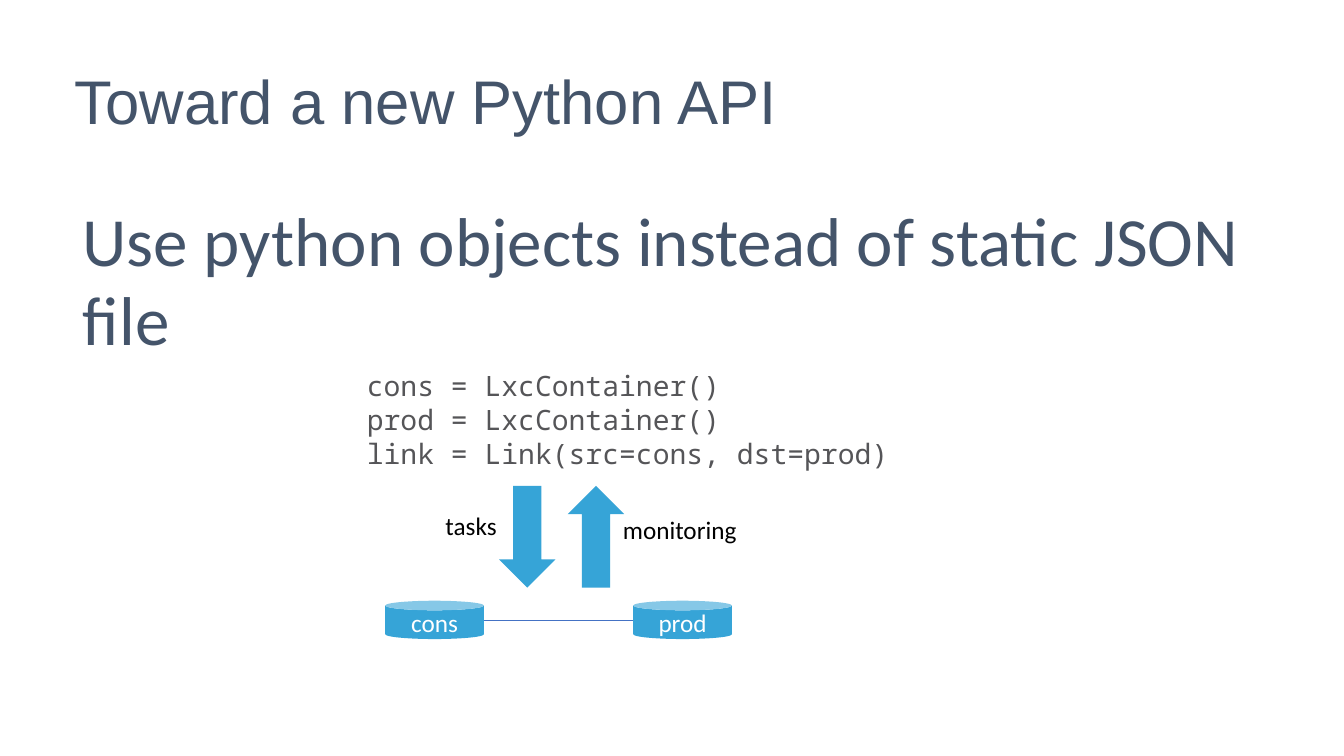
import pptx
import pptx.util
import pptx.dml.color
import pptx.enum.shapes
import pptx.enum.text
import pptx.oxml.ns
import lxml.etree

Inches, Pt = pptx.util.Inches, pptx.util.Pt
RGBColor = pptx.dml.color.RGBColor
SHAPE = pptx.enum.shapes.MSO_SHAPE
ALIGN = pptx.enum.text.PP_ALIGN
ANCHOR = pptx.enum.text.MSO_ANCHOR
AUTO = pptx.enum.text.MSO_AUTO_SIZE
qn = pptx.oxml.ns.qn

SLATE = RGBColor(0x44, 0x54, 0x6A)
GREY = RGBColor(0x55, 0x55, 0x58)
SKY = RGBColor(0x36, 0xA4, 0xD7)
BLUE = RGBColor(0x44, 0x72, 0xC4)
WHITE = RGBColor(0xFF, 0xFF, 0xFF)
BLACK = RGBColor(0, 0, 0)

TITLE = "Toward a new Python API"
BODY = "Use python objects instead of static JSON file"
CODE = [
    "cons = LxcContainer()",
    "prod = LxcContainer()",
    "link = Link(src=cons, dst=prod)",
]
ARROWS = [(4.95, 0), (5.63, 180)]
LABELS = [("tasks", (4.32, 5.01, 0.79, 0.4)), ("monitoring", (6.08, 5.05, 1.38, 0.4))]
CONTAINERS = [("cons", 3.82), ("prod", 6.28)]
CAN_TOP, CAN_W, CAN_H = 5.96, 0.98, 0.38

FONTS = {
    "title": {"name": "Arial", "size": Pt(44), "color": SLATE},
    "body": {"name": "Calibri", "size": Pt(49.3), "color": SLATE},
    "code": {"name": "Noto Sans Mono", "size": Pt(20), "color": GREY},
    "label": {"name": "Calibri", "size": Pt(18), "color": BLACK},
    "can": {"name": "Calibri", "size": Pt(18), "color": WHITE},
}


def write(tf, lines, style, para={}, frame={}):
    for key, value in frame.items():
        setattr(tf, key, value)
    for i, line in enumerate(lines):
        p = tf.paragraphs[0] if i == 0 else tf.add_paragraph()
        for key, value in para.items():
            setattr(p, key, value)
        r = p.add_run()
        r.text = line
        for key, value in FONTS[style].items():
            if key == "color":
                r.font.color.rgb = value
            else:
                setattr(r.font, key, value)


def place(sp, *box):
    for key, value in zip(("left", "top", "width", "height"), box):
        setattr(sp, key, Inches(value))


def add_shape(s, kind, *box):
    sp = s.shapes.add_shape(kind, *map(Inches, box))
    sp.shadow.inherit = False
    sp.fill.solid()
    sp.fill.fore_color.rgb = SKY
    sp.line.fill.background()
    return sp


def main():
    prs = pptx.Presentation()
    prs.slide_width, prs.slide_height = Inches(13.33), Inches(7.5)
    s = prs.slides.add_slide(prs.slide_layouts[1])
    title, body = s.shapes.title, s.placeholders[1]

    place(title, 0.64, 0.5, 12.17, 1.07)
    write(title.text_frame, [TITLE], "title",
          {"alignment": ALIGN.LEFT, "line_spacing": 0.9},
          {"vertical_anchor": ANCHOR.MIDDLE, "auto_size": AUTO.NONE})

    place(body, 0.64, 1.97, 12.17, 4.62)
    pPr = body.text_frame.paragraphs[0]._p.get_or_add_pPr()
    pPr.set("marL", str(Inches(0.08)))
    pPr.set("indent", "0")
    lxml.etree.SubElement(pPr, qn("a:buNone"))
    write(body.text_frame, [BODY], "body",
          {"line_spacing": 0.95, "space_before": Pt(0)}, {"auto_size": AUTO.NONE})

    code = s.shapes.add_textbox(*map(Inches, (3.54, 3.61, 6.37, 3.37)))
    write(code.text_frame, CODE, "code", frame={"word_wrap": True})

    for left, turn in ARROWS:
        add_shape(s, SHAPE.DOWN_ARROW, left, 4.82, 0.56, 1.01).rotation = turn

    for name, left in CONTAINERS:
        can = add_shape(s, SHAPE.CAN, left, CAN_TOP, CAN_W, CAN_H)
        write(can.text_frame, [name], "can", {"alignment": ALIGN.CENTER},
              {"vertical_anchor": ANCHOR.MIDDLE, "word_wrap": True})

    mid = CAN_TOP + CAN_H / 2
    link = s.shapes.add_connector(
        pptx.enum.shapes.MSO_CONNECTOR.STRAIGHT,
        *map(Inches, (CONTAINERS[0][1] + CAN_W, mid, CONTAINERS[1][1], mid)))
    link.line.color.rgb = BLUE
    link.line.width = Pt(0.5)
    lxml.etree.SubElement(link._element.spPr, qn("a:effectLst"))

    for text, box in LABELS:
        label = s.shapes.add_textbox(*map(Inches, box))
        write(label.text_frame, [text], "label",
              frame={"word_wrap": False, "auto_size": AUTO.SHAPE_TO_FIT_TEXT})

    prs.save("out.pptx")


if __name__ == "__main__":
    main()
